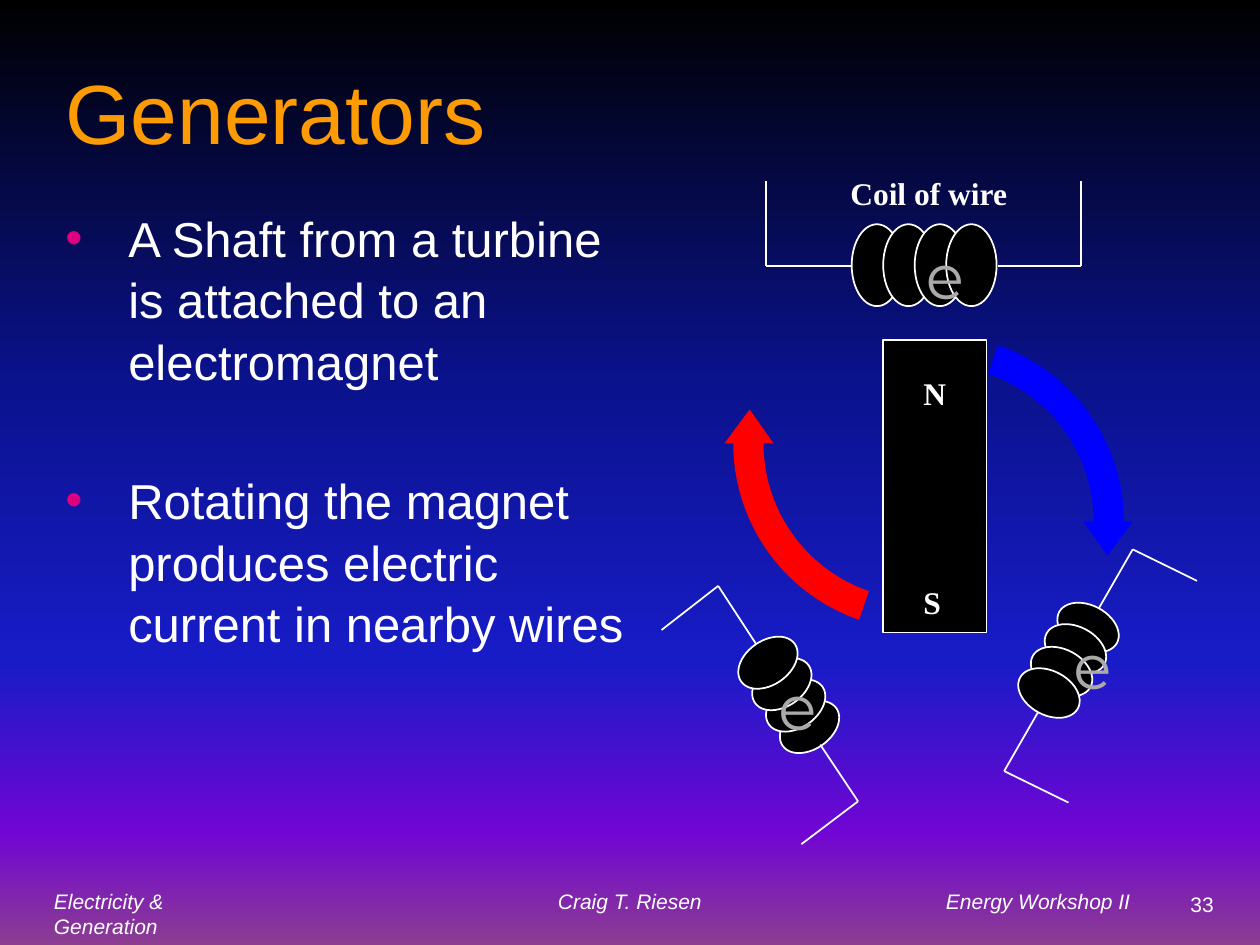
import math

from lxml import etree
from pptx import Presentation
from pptx.dml.color import RGBColor
from pptx.enum.shapes import MSO_CONNECTOR, MSO_SHAPE
from pptx.enum.text import MSO_ANCHOR, MSO_AUTO_SIZE, PP_ALIGN
from pptx.oxml.ns import qn
from pptx.util import Emu, Pt

SCALE = 9144  # EMU per px, 100 px to the inch
TITLE_ONLY = 5

RECTANGLE, OVAL = MSO_SHAPE.RECTANGLE, MSO_SHAPE.OVAL
STRAIGHT = MSO_CONNECTOR.STRAIGHT
LEFT, CENTER = PP_ALIGN.LEFT, PP_ALIGN.CENTER
MIDDLE = MSO_ANCHOR.MIDDLE
NO_AUTOFIT = MSO_AUTO_SIZE.NONE

BLACK = RGBColor(0x00, 0x00, 0x00)
WHITE = RGBColor(0xFF, 0xFF, 0xFF)
ORANGE = RGBColor(0xFE, 0x9B, 0x03)
PINK = RGBColor(0xDC, 0x00, 0x81)
RED = RGBColor(0xFF, 0x00, 0x00)
BLUE = RGBColor(0x00, 0x00, 0xFF)
SILVER = RGBColor(0xAA, 0xAA, 0xAA)
BACKDROP = [
    (0, BLACK),
    (40, RGBColor(0x0A, 0x12, 0x8C)),
    (70, RGBColor(0x18, 0x1C, 0xC7)),
    (88, RGBColor(0x70, 0x05, 0xD4)),
    (100, RGBColor(0x8C, 0x3D, 0x91)),
]


def px(length):
    return Emu(round(length * SCALE))


def paint_backdrop(slide):
    fill = slide.background.fill
    fill.gradient()
    fill.gradient_angle = 270
    stops = slide.element.find(".//" + qn("a:gsLst"))
    for stop in list(stops):
        stops.remove(stop)
    for percent, color in BACKDROP:
        stop = etree.SubElement(stops, qn("a:gs"), pos=str(percent * 1000))
        etree.SubElement(stop, qn("a:srgbClr"), val=str(color))


def write(paragraph, text, size=12, font="Arial", color=WHITE, bold=False,
          italic=False, align=LEFT):
    paragraph.alignment = align
    run = paragraph.add_run()
    run.text = text
    run.font.size = Pt(size)
    run.font.name = font
    run.font.bold = bold
    run.font.italic = italic
    run.font.color.rgb = color
    return run


def add_text(shapes, box, text, wrap=False, **style):
    frame = shapes.add_textbox(*map(px, box)).text_frame
    frame.word_wrap = wrap
    return write(frame.paragraphs[0], text, **style)


def add_title(slide, text):
    title = slide.shapes.title
    title.left, title.top, title.width, title.height = map(px, (42, 25, 850, 126))
    frame = title.text_frame
    frame.auto_size = NO_AUTOFIT
    frame.vertical_anchor = MIDDLE
    write(frame.paragraphs[0], text, size=48, color=ORANGE)


def add_bullets(slide, box, points):
    frame = slide.shapes.add_textbox(*map(px, box)).text_frame
    frame.word_wrap = True
    for index, point in enumerate(points):
        paragraph = frame.paragraphs[0] if index == 0 else frame.add_paragraph()
        paragraph.line_spacing = 1.05
        paragraph.space_before = Pt(44 if index else 0)
        write(paragraph, point, size=28)
        properties = paragraph._p.get_or_add_pPr()
        properties.set("marL", str(px(50)))
        properties.set("indent", str(px(-50)))
        bullet_color = etree.SubElement(properties, qn("a:buClr"))
        etree.SubElement(bullet_color, qn("a:srgbClr"), val=str(PINK))
        etree.SubElement(properties, qn("a:buFont"), typeface="Arial")
        etree.SubElement(properties, qn("a:buChar"), char="•")


def add_outlined(shapes, kind, box, rotation=0):
    shape = shapes.add_shape(kind, *map(px, box))
    shape.shadow.inherit = False
    shape.rotation = rotation
    shape.fill.solid()
    shape.fill.fore_color.rgb = BLACK
    shape.line.color.rgb = WHITE
    shape.line.width = Pt(1)


def add_wire(shapes, points):
    for start, end in zip(points, points[1:]):
        wire = shapes.add_connector(STRAIGHT, *map(px, start + end))
        wire.line.color.rgb = WHITE
        wire.line.width = Pt(1)
        etree.SubElement(wire._element.spPr, qn("a:effectLst"))


def add_coil(shapes, first, last, size, rotation, wires):
    turns = 4
    for turn in range(turns):
        corner = [round(a + (b - a) * turn / (turns - 1)) for a, b in zip(first, last)]
        add_outlined(shapes, OVAL, (*corner, *size), rotation)
    for wire in wires:
        add_wire(shapes, wire)


def arrow_outline():
    """Arc band that sweeps up and left from the south pole, with its head."""
    center_x, center_y, sweep, steps = 730, 352, 71, 24

    def arc(radius):
        angles = [math.radians(sweep * step / steps) for step in range(steps + 1)]
        return [(center_x - radius * math.cos(angle),
                 center_y + radius * math.sin(angle)) for angle in angles]

    head = [(614, center_y), (595, 325), (575, center_y)]
    return arc(124)[::-1] + head + arc(148)


def add_arrow(shapes, outline, color):
    points = [(px(x), px(y)) for x, y in outline]
    builder = shapes.build_freeform(*points[0])
    builder.add_line_segments(points[1:], close=True)
    arrow = builder.convert_to_shape()
    arrow.shadow.inherit = False
    arrow.fill.solid()
    arrow.fill.fore_color.rgb = color
    arrow.line.fill.background()


def add_electron(shapes, left, top):
    electron = add_text(shapes, (left, top, 25, 52), "e", size=36,
                        font="Montserrat", align=CENTER)
    fill = electron.font.fill
    fill.gradient()
    fill.gradient_angle = 270
    for stop, color in zip(fill.gradient_stops, (SILVER, WHITE)):
        stop.color.rgb = color
    electron.font._element.set("spc", "720")


def add_generator(slide):
    shapes = slide.shapes.add_group_shape().shapes
    label = {"size": 18, "font": "Times New Roman", "bold": True}

    # Magnet with its poles
    add_outlined(shapes, RECTANGLE, (701, 270, 82, 232))
    add_text(shapes, (723, 292, 38, 40), "N", **label)
    add_text(shapes, (723, 458, 34, 40), "S", **label)

    # Rotation arrows, one the half-turn of the other
    outline = arrow_outline()
    add_arrow(shapes, outline, RED)
    add_arrow(shapes, [(1474 - x, 766 - y) for x, y in outline], BLUE)

    # Coils at the top, right and left
    add_coil(shapes, (676, 178), (751, 178), (40, 65), 0,
             [[(792, 211), (858, 211), (858, 144)],
              [(675, 211), (608, 211), (608, 144)]])
    add_text(shapes, (665, 133, 145, 40), "Coil of wire", **label)
    add_coil(shapes, (846, 472), (815, 524), (35, 52), 118,
             [[(824, 565), (797, 612), (848, 637)],
              [(872, 483), (899, 436), (950, 461)]])
    add_coil(shapes, (625, 551), (592, 500), (35, 52), 235,
             [[(600, 511), (570, 465), (525, 500)],
              [(651, 591), (681, 636), (636, 670)]])


def main():
    deck = Presentation()
    deck.slide_width, deck.slide_height = px(1000), px(750)
    slide = deck.slides.add_slide(deck.slide_layouts[TITLE_ONLY])
    paint_backdrop(slide)

    # Footer
    add_text(slide.shapes, (433, 700, 200, 30), "Craig T. Riesen", italic=True)
    add_text(slide.shapes, (741, 700, 176, 30), "Energy Workshop II", italic=True)
    add_text(slide.shapes, (935, 703, 40, 30), "33")
    add_text(slide.shapes, (33, 700, 180, 30), "Electricity & Generation",
             wrap=True, italic=True)

    # Title and bullets
    add_title(slide, "Generators")
    add_bullets(slide, (42, 158, 483, 392), [
        "A Shaft from a turbine is attached to an electromagnet",
        "Rotating the magnet produces electric current in nearby wires",
    ])

    # Generator diagram with an electron in each coil
    add_generator(slide)
    for left, top in [(725, 183), (842, 492), (608, 525)]:
        add_electron(slide.shapes, left, top)

    deck.save("out.pptx")


if __name__ == "__main__":
    main()
